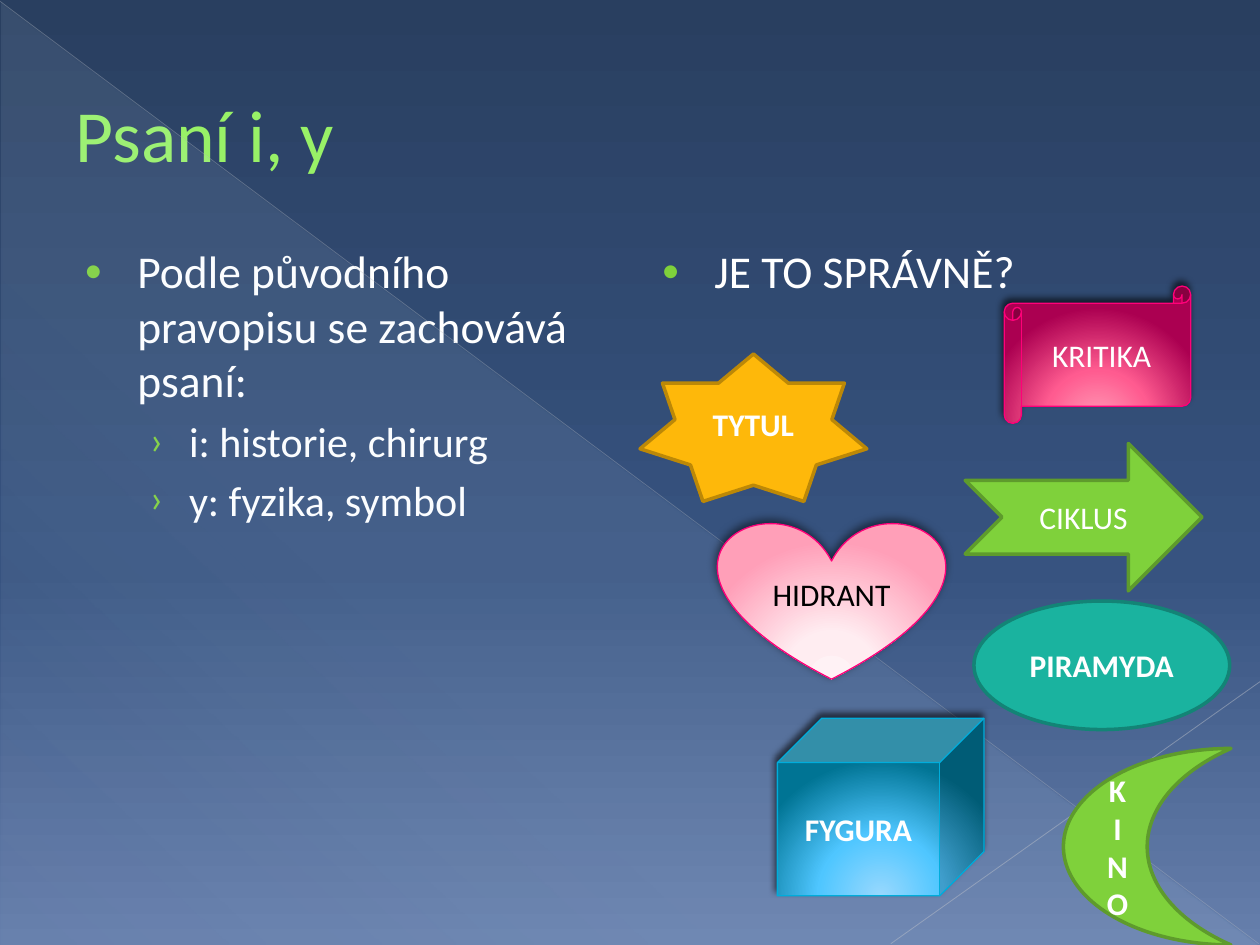
from dataclasses import dataclass
from typing import NamedTuple, Optional

from lxml import etree
from pptx import Presentation
from pptx.dml.color import RGBColor
from pptx.enum.shapes import MSO_CONNECTOR, MSO_SHAPE
from pptx.enum.text import MSO_ANCHOR, MSO_AUTO_SIZE, PP_ALIGN
from pptx.oxml.ns import qn
from pptx.util import Inches, Pt

UNIT = Inches(0.1)  # the slide is a grid of 100 columns by 75 rows
COLUMNS, ROWS = 100, 75
FONT = "Calibri"
LEFT, CENTER = PP_ALIGN.LEFT, PP_ALIGN.CENTER
MIDDLE, TOP = MSO_ANCHOR.MIDDLE, MSO_ANCHOR.TOP
STRAIGHT = MSO_CONNECTOR.STRAIGHT
TRIANGLE = MSO_SHAPE.RIGHT_TRIANGLE

COLORS = {
    "white": "FFFFFF", "black": "000000", "title": "98F167", "ice": "D6ECFF",
    "night": "293F60", "dusk": "375380", "haze": "667FAC",
    "ray": "B7BCC5", "pale ray": "BFC3CB",
    "green": "7FD13B", "dark green": "5E9B2C",
    "gold": "FEB80A", "dark gold": "BC8807",
    "teal": "1AB39F", "dark teal": "138476",
    "magenta": "FF0079", "cyan": "00ADDC",
}


class Area(NamedTuple):
    column: float
    row: float
    columns: float
    rows: float


class Stop(NamedTuple):
    position: int
    color: str
    alpha: int = 100


class Shadow(NamedTuple):
    alpha: int
    blur: float
    distance: float


class Bullet(NamedTuple):
    mark: str
    percent: int
    margin: float
    hanging: float
    size: int


class Ray(NamedTuple):
    start: tuple
    end: tuple
    color: str
    width: float
    alpha: int


@dataclass
class WordShape:
    kind: MSO_SHAPE
    area: Area
    lines: list
    fill: object  # a colour name, or a list of stops for a glow
    outline: str
    width: float = 2
    bold: bool = False
    text_color: str = "white"
    shadow: Optional[Shadow] = None


BULLETS = [Bullet("•", 80, 0.49, 0.42, 26), Bullet("›", 95, 0.9, 0.31, 24)]
BACKDROP = [Stop(0, COLORS["night"]), Stop(60, COLORS["dusk"]), Stop(100, COLORS["haze"])]
VEIL = [Stop(0, COLORS["ice"], 10), Stop(70, COLORS["ice"], 8), Stop(100, COLORS["ice"], 1)]
RAYS = [Ray((0, 0.1), (99.9, 74.9), "ray", 0.39, 35),
        Ray((100, 54.1), (70.7, 74.9), "pale ray", 0.47, 45)]
TITLE_AREA = Area(5, 2.9, 90, 15.3)
LISTS = [
    (Area(5, 18.8, 44.2, 49.5), [
        (0, "Podle původního pravopisu se zachovává psaní:"),
        (1, "i: historie, chirurg"),
        (1, "y: fyzika, symbol")]),
    (Area(50.8, 18.8, 44.2, 49.5), [(0, "JE TO SPRÁVNĚ?")]),
]
PINK_GLOW = [Stop(0, "FF9FB8"), Stop(46, "FF5B90"), Stop(100, "AB0051")]
ROSE_GLOW = [Stop(0, "FFF2F5"), Stop(34, "FFEDF1"), Stop(100, "FF9FB8")]
BLUE_GLOW = [Stop(0, "98D8FE"), Stop(46, "4FC6FF"), Stop(100, "007494")]
DEEP, SOFT = Shadow(60, 4, 3), Shadow(50, 5, 2)
WORDS = [
    WordShape(MSO_SHAPE.STAR_7_POINT, Area(50.8, 28.1, 18, 11.7), ["TYTUL"],
              "gold", "dark gold", bold=True),
    WordShape(MSO_SHAPE.HORIZONTAL_SCROLL, Area(79.7, 22.7, 14.8, 10.9), ["KRITIKA"],
              PINK_GLOW, "magenta", 0.75, shadow=DEEP),
    WordShape(MSO_SHAPE.NOTCHED_RIGHT_ARROW, Area(76.6, 35.2, 18.8, 11.7), ["CIKLUS"],
              "green", "dark green"),
    WordShape(MSO_SHAPE.HEART, Area(57, 41.4, 18, 12.5), ["HIDRANT"],
              ROSE_GLOW, "magenta", 0.75, text_color="black", shadow=SOFT),
    WordShape(MSO_SHAPE.OVAL, Area(77.3, 47.7, 20.3, 10.2), ["PIRAMYDA"],
              "teal", "dark teal", bold=True),
    WordShape(MSO_SHAPE.CUBE, Area(61.7, 57, 16.4, 14.1), ["FYGURA"],
              BLUE_GLOW, "cyan", 0.75, bold=True, shadow=DEEP),
    WordShape(MSO_SHAPE.MOON, Area(84.4, 59.4, 13.3, 15.6), ["K", "I", "NO"],
              "green", "dark green", bold=True),
]


def rgb(name: str) -> RGBColor:
    return RGBColor.from_string(COLORS[name])


def grid(*lengths: float) -> list:
    return [round(length * UNIT) for length in lengths]


def add_node(parent, tag: str, **values):
    return etree.SubElement(parent, qn(tag), {key: str(value) for key, value in values.items()})


def add_color(parent, color: str, alpha: int = 100) -> None:
    node = add_node(parent, "a:srgbClr", val=color)
    if alpha < 100:
        add_node(node, "a:alpha", val=alpha * 1000)


def paint_gradient(fill, owner, stops: list, angle: Optional[int] = None) -> None:
    """Fill with a linear gradient, or a glow from below when no angle is given."""
    fill.solid()
    solid = owner.find(".//" + qn("a:solidFill"))
    gradient = etree.Element(qn("a:gradFill"), rotWithShape="1")
    stop_list = add_node(gradient, "a:gsLst")
    for stop in stops:
        add_color(add_node(stop_list, "a:gs", pos=stop.position * 1000), stop.color, stop.alpha)
    if angle is None:
        circle = add_node(gradient, "a:path", path="circle")
        add_node(circle, "a:fillToRect", l=50000, t=155000, r=50000, b=-55000)
    else:
        add_node(gradient, "a:lin", ang=angle * 60000, scaled=0)
    solid.getparent().replace(solid, gradient)


def format_font(para, color: str, size: int, bold: bool = False) -> None:
    for key, value in {"name": FONT, "size": Pt(size), "bold": bold}.items():
        setattr(para.font, key, value)
    para.font.color.rgb = rgb(color)


def place(box, area: Area) -> None:
    for key, value in zip(("left", "top", "width", "height"), grid(*area)):
        setattr(box, key, value)


def draw_ray(page, ray: Ray) -> None:
    line = page.shapes.add_connector(STRAIGHT, *grid(*ray.start, *ray.end))
    line.line.width = Pt(ray.width)
    line.line.color.rgb = rgb(ray.color)
    add_node(line.element.find(".//" + qn("a:srgbClr")), "a:alpha", val=ray.alpha * 1000)
    add_node(line.element.spPr, "a:effectLst")


def draw_backdrop(page) -> None:
    paint_gradient(page.background.fill, page.element, BACKDROP, 90)
    veil = page.shapes.add_shape(TRIANGLE, *grid(0.1, 0.2, 99.8, 74.8))
    veil.shadow.inherit = False
    paint_gradient(veil.fill, veil.element, VEIL, 133)
    veil.line.fill.background()
    for ray in RAYS:
        draw_ray(page, ray)


def fill_title(title) -> None:
    place(title, TITLE_AREA)
    title.text_frame.vertical_anchor = MIDDLE
    title.text_frame.text = "Psaní i, y"
    para = title.text_frame.paragraphs[0]
    para.alignment = LEFT
    format_font(para, "title", 42)


def fill_list(box, area: Area, items: list) -> None:
    place(box, area)
    frame = box.text_frame
    frame.auto_size, frame.vertical_anchor = MSO_AUTO_SIZE.NONE, TOP
    frame.text = "\n".join(text for level, text in items)
    for index, (para, (level, text)) in enumerate(zip(frame.paragraphs, items)):
        bullet = BULLETS[level]
        para.level = level
        properties = para._p.get_or_add_pPr()
        properties.set("marL", str(Inches(bullet.margin)))
        properties.set("indent", str(-Inches(bullet.hanging)))
        add_color(add_node(properties, "a:buClr"), COLORS["green"])
        add_node(properties, "a:buSzPct", val=bullet.percent * 1000)
        add_node(properties, "a:buFont", typeface=FONT)
        add_node(properties, "a:buChar", char=bullet.mark)
        para.space_before = Pt(bullet.size * 0.2 if index else 0)
        format_font(para, "white", bullet.size)


def draw_word(page, word: WordShape) -> None:
    shape = page.shapes.add_shape(word.kind, *grid(*word.area))
    shape.shadow.inherit = False
    if isinstance(word.fill, str):
        shape.fill.solid()
        shape.fill.fore_color.rgb = rgb(word.fill)
    else:
        paint_gradient(shape.fill, shape.element, word.fill)
    shape.line.color.rgb = rgb(word.outline)
    shape.line.width = Pt(word.width)
    if word.shadow:
        effects = shape.element.spPr.find(qn("a:effectLst"))
        outer = add_node(effects, "a:outerShdw", blurRad=Pt(word.shadow.blur),
                         dist=Pt(word.shadow.distance), dir=245 * 60000, rotWithShape=0)
        add_color(outer, COLORS["black"], word.shadow.alpha)
    frame = shape.text_frame
    frame.word_wrap, frame.vertical_anchor = True, MIDDLE
    frame.text = "\n".join(word.lines)
    for para in frame.paragraphs:
        para.alignment = CENTER
        format_font(para, word.text_color, 18, word.bold)


def main() -> None:
    deck = Presentation()
    deck.slide_width, deck.slide_height = grid(COLUMNS, ROWS)
    page = deck.slides.add_slide(deck.slide_layouts.get_by_name("Two Content"))
    title, *boxes = page.placeholders
    draw_backdrop(page)
    fill_title(title)
    for box, (area, items) in zip(boxes, LISTS):
        fill_list(box, area, items)
    for word in WORDS:
        draw_word(page, word)
    deck.save("out.pptx")


if __name__ == "__main__":
    main()
